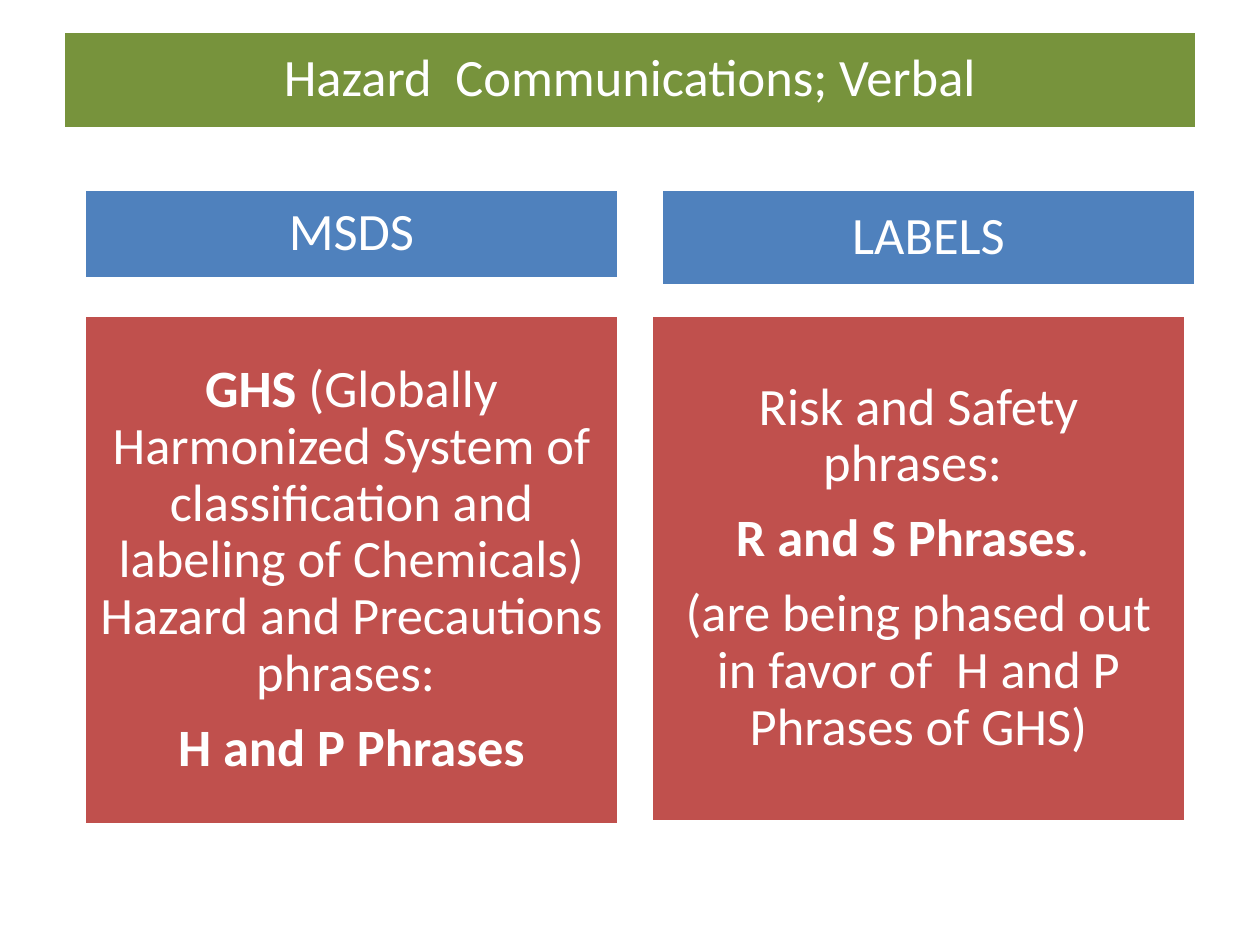
from dataclasses import dataclass

from pptx import Presentation
from pptx.dml.color import RGBColor
from pptx.enum.shapes import MSO_SHAPE as Shape
from pptx.enum.text import MSO_ANCHOR as Anchor, PP_ALIGN as Align
from pptx.util import Emu, Pt

PX = 9144  # EMU per px, 100 px to the inch


@dataclass(frozen=True)
class Theme:
    font: str = "Calibri"
    size: int = 30
    space_after: float = 10.5
    line_spacing: float = 0.9
    line_width: int = 2
    inset: int = 12
    white: str = "FFFFFF"
    title: str = "77933C"
    heading: str = "4F81BD"
    body: str = "C0504D"


THEME = Theme()


def px(n):
    return Emu(n * PX)


def rgb(code):
    return RGBColor.from_string(code)


def add_text(tf, paragraphs, *, size=THEME.size, color=THEME.white, align=Align.CENTER):
    """Fill a text frame; each paragraph is a list of (text, bold) runs."""
    tf.word_wrap = True
    tf.vertical_anchor = Anchor.MIDDLE
    tf.margin_left = tf.margin_right = px(THEME.inset)
    tf.margin_top = tf.margin_bottom = px(THEME.inset)
    for i, runs in enumerate(paragraphs):
        p = tf.add_paragraph() if i else tf.paragraphs[0]
        p.alignment = align
        p.line_spacing = THEME.line_spacing
        p.space_after = Pt(THEME.space_after)
        for text, bold in runs:
            r = p.add_run()
            r.text = text
            r.font.name = THEME.font
            r.font.size = Pt(size)
            r.font.bold = bold
            r.font.color.rgb = rgb(color)


def add_block(s, box, fill, paragraphs):
    """Filled rectangle with centred text."""
    sp = s.shapes.add_shape(Shape.RECTANGLE, *map(px, box))
    sp.shadow.inherit = False
    sp.fill.solid()
    sp.fill.fore_color.rgb = rgb(fill)
    sp.line.color.rgb = rgb(THEME.white)
    sp.line.width = Pt(THEME.line_width)
    add_text(sp.text_frame, paragraphs)


def add_title(s, box, text):
    add_block(s, box, THEME.title, [[(text, False)]])


def add_column(s, box, heading, paragraphs, *, heading_h, heading_dx=0):
    """Heading at the top of the box, body 100 px below its top edge."""
    x, y, w, h = box
    body_dy = 100
    add_block(s, (x + heading_dx, y, w, heading_h), THEME.heading, [[(heading, False)]])
    add_block(s, (x, y + body_dy, w, h - body_dy), THEME.body, paragraphs)


def main():
    prs = Presentation()
    prs.slide_width, prs.slide_height = px(1000), px(750)
    s = prs.slides.add_slide(prs.slide_layouts[6])

    # Title bar
    add_title(s, (50, 25, 900, 77), "Hazard  Communications; Verbal")

    # Left column
    msds = [
        [("GHS", True),
         (" (Globally Harmonized System of classification and labeling of "
          "Chemicals) Hazard and Precautions phrases: ", False)],
        [("H and P Phrases", True)],
    ]
    add_column(s, (67, 150, 424, 505), "MSDS", msds, heading_h=71)

    # Right column, its heading set slightly to the right
    labels = [
        [("Risk and Safety phrases: ", False)],
        [("R and S Phrases", True), (". ", False)],
        [("(are being phased out in favor of  H and P Phrases of GHS)", False)],
    ]
    add_column(s, (517, 150, 424, 502), "LABELS", labels, heading_h=77, heading_dx=8)

    prs.save("out.pptx")


if __name__ == "__main__":
    main()
